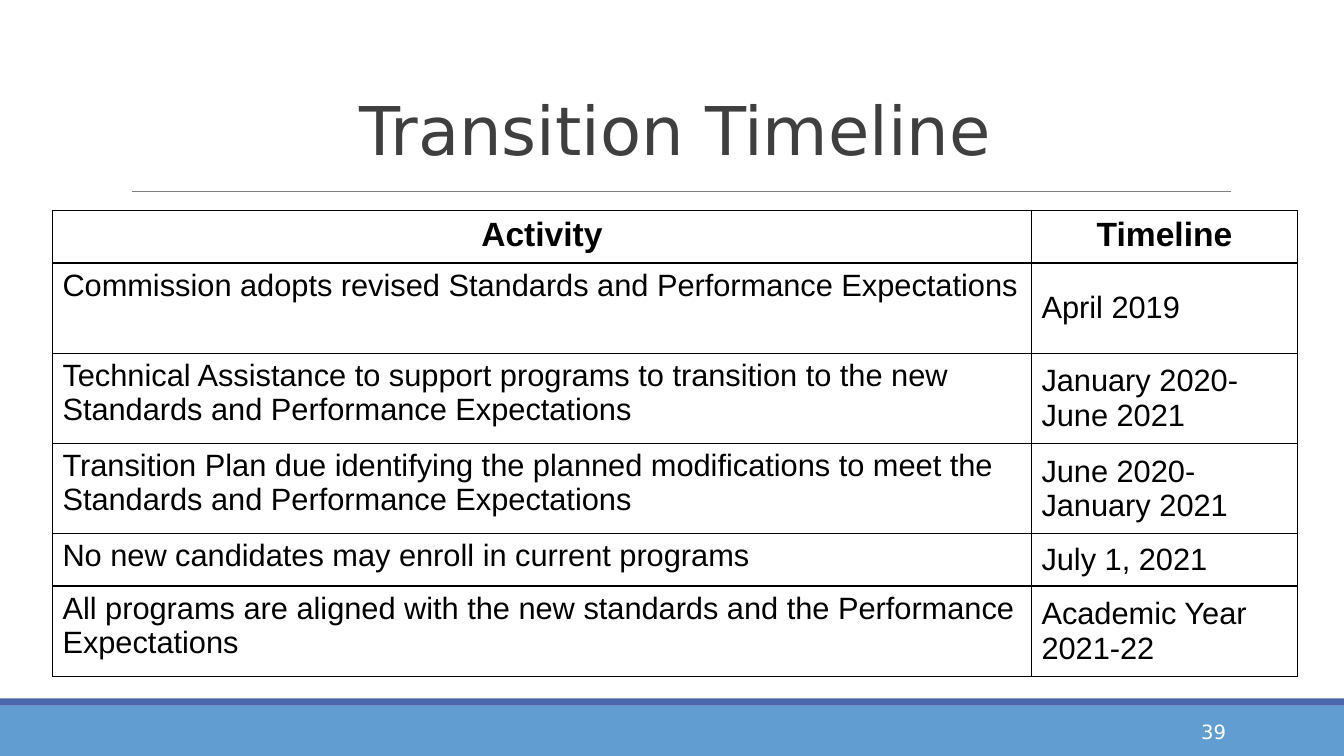
from lxml import etree
from pptx import Presentation
from pptx.dml.color import RGBColor
from pptx.enum import shapes, text
from pptx.oxml import ns
from pptx.util import Inches, Pt

TITLE = "Transition Timeline"
PAGE_NUMBER = "39"
HEADER = ("Activity", "Timeline")
ACTIVITIES = [
    ("Commission adopts revised Standards and Performance Expectations", "April 2019"),
    ("Technical Assistance to support programs to transition to the new "
     "Standards and Performance Expectations", "January 2020-June 2021"),
    ("Transition Plan due identifying the planned modifications to meet the "
     "Standards and Performance Expectations", "June 2020-January 2021"),
    ("No new candidates may enroll in current programs", "July 1, 2021"),
    ("All programs are aligned with the new standards and the Performance "
     "Expectations", "Academic Year 2021-22"),
]
WIDTH, HEIGHT = 13.33, 7.5
COLUMNS = (9.71, 2.64)
SHORT_ROW, TALL_ROW = 0.52, 0.895
ROWS = (SHORT_ROW, TALL_ROW, TALL_ROW, TALL_ROW, SHORT_ROW, TALL_ROW)
FOOTER_TOP, STRIPE = 7, 0.07

BLACK = RGBColor(0x00, 0x00, 0x00)
WHITE = RGBColor(0xFF, 0xFF, 0xFF)
CHARCOAL = RGBColor(0x3F, 0x3F, 0x3F)
GRAY = RGBColor(0x7F, 0x7F, 0x7F)
SKY = RGBColor(0x62, 0x9D, 0xD1)
INDIGO = RGBColor(0x4A, 0x66, 0xAC)


def write(frame, words, size, color=BLACK, font="Arial", bold=False,
          align=text.PP_ALIGN.LEFT, anchor=text.MSO_ANCHOR.TOP, spacing=None):
    frame.word_wrap = True
    frame.vertical_anchor = anchor
    para = frame.paragraphs[0]
    para.alignment = align
    para.line_spacing = spacing
    span = para.add_run()
    span.text = words
    span.font.size = Pt(size)
    span.font.name = font
    span.font.bold = bold
    span.font.color.rgb = color


def add_band(page, top, height, color):
    band = page.shapes.add_shape(shapes.MSO_SHAPE.RECTANGLE, 0, Inches(top),
                                 Inches(WIDTH), Inches(height))
    band.shadow.inherit = False
    band.fill.solid()
    band.fill.fore_color.rgb = color
    band.line.fill.background()


def add_rule(page, left, right, top):
    rule = page.shapes.add_connector(shapes.MSO_CONNECTOR.STRAIGHT, Inches(left),
                                     Inches(top), Inches(right), Inches(top))
    rule.line.color.rgb = GRAY
    rule.line.width = Pt(0.75)
    etree.SubElement(rule._element.spPr, ns.qn("a:effectLst"))


def add_text(page, left, top, width, height, words, **style):
    box = page.shapes.add_textbox(*map(Inches, (left, top, width, height)))
    write(box.text_frame, words, **style)


def outline(cell):
    properties = cell._tc.get_or_add_tcPr()
    for place, side in enumerate(("lnL", "lnR", "lnT", "lnB")):
        border = etree.Element(ns.qn(f"a:{side}"), w=str(Pt(1)))
        fill = etree.SubElement(border, ns.qn("a:solidFill"))
        etree.SubElement(fill, ns.qn("a:srgbClr"), val=str(BLACK))
        properties.insert(place, border)


def add_timeline(page, left, top):
    frame = page.shapes.add_table(len(ROWS), len(COLUMNS), Inches(left), Inches(top),
                                  Inches(sum(COLUMNS)), Inches(sum(ROWS)))
    table = frame.table
    table.horz_banding = False
    for column, width in zip(table.columns, COLUMNS):
        column.width = Inches(width)
    for row, height in zip(table.rows, ROWS):
        row.height = Inches(height)
    for r, entries in enumerate([HEADER] + ACTIVITIES):
        for c, words in enumerate(entries):
            cell = table.cell(r, c)
            cell.margin_left = cell.margin_right = Inches(0.1)
            cell.margin_top = cell.margin_bottom = Inches(0.05)
            cell.fill.background()
            outline(cell)
            if r == 0:
                style = dict(size=24, bold=True, align=text.PP_ALIGN.CENTER)
            else:
                style = dict(size=22)
            write(cell.text_frame, words, **style)
            if r and c:
                cell.vertical_anchor = text.MSO_ANCHOR.MIDDLE


def main():
    deck = Presentation()
    deck.slide_width, deck.slide_height = Inches(WIDTH), Inches(HEIGHT)
    page = deck.slides.add_slide(deck.slide_layouts[6])
    add_band(page, FOOTER_TOP, HEIGHT - FOOTER_TOP, SKY)
    add_band(page, FOOTER_TOP - STRIPE, STRIPE, INDIGO)
    add_rule(page, 1.31, 12.21, 1.9)
    add_text(page, 1.2, 0.31, 11, 1.42, TITLE, size=48, color=CHARCOAL,
             font="DejaVu Sans", align=text.PP_ALIGN.CENTER,
             anchor=text.MSO_ANCHOR.BOTTOM, spacing=0.85)
    add_timeline(page, 0.52, 2.09)
    add_text(page, 10.83, 7.06, 1.43, 0.4, PAGE_NUMBER, size=14, color=WHITE,
             font="DejaVu Sans", align=text.PP_ALIGN.RIGHT,
             anchor=text.MSO_ANCHOR.MIDDLE)
    deck.save("out.pptx")


if __name__ == "__main__":
    main()
